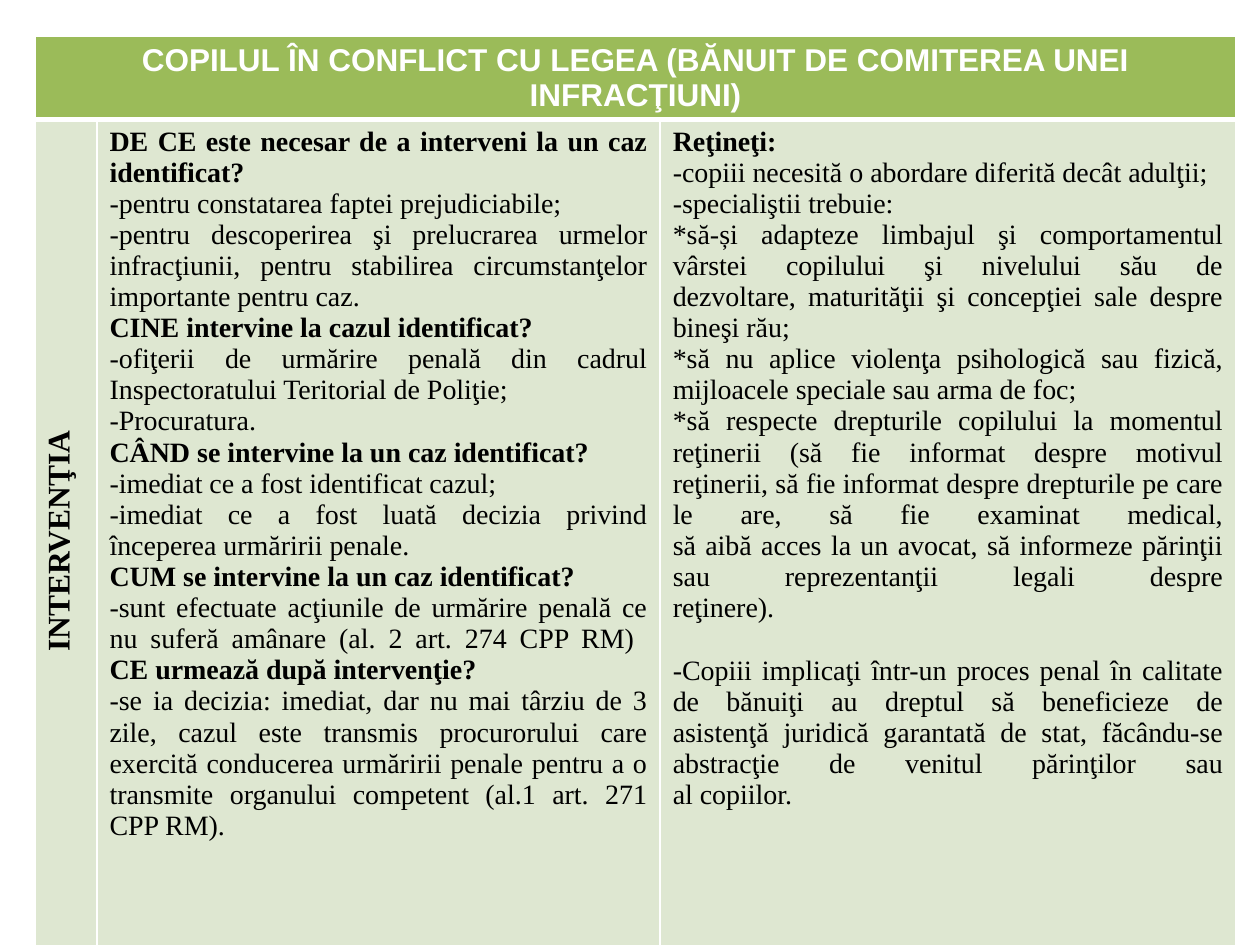
from copy import deepcopy
from dataclasses import dataclass

from lxml.etree import SubElement
from pptx import Presentation
from pptx.dml.color import RGBColor as RGB
from pptx.enum.text import PP_ALIGN as AL
from pptx.oxml.ns import qn
from pptx.util import Inches, Pt


@dataclass(frozen=True)
class Theme:
    header: str = "9BBB59"
    body: str = "DEE7D1"
    white: str = "FFFFFF"
    black: str = "000000"
    head_font: str = "Arial"
    body_font: str = "Times New Roman"
    head_size: int = 18
    body_size: int = 16
    line: float = 1
    heavy_line: float = 3


BOLD = "#"  # a line starting with this mark is bold

TITLE = "#COPILUL ÎN CONFLICT CU LEGEA (BĂNUIT DE COMITEREA UNEI INFRACŢIUNI)"
STAGE = "#INTERVENŢIA"

QUESTIONS = [
    ("#DE CE este necesar de a interveni la un caz identificat?", {}),
    ("-pentru constatarea faptei prejudiciabile;", {}),
    ("-pentru descoperirea şi prelucrarea urmelor infracţiunii, pentru stabilirea "
     "circumstanţelor importante pentru caz.", {}),
    ("#CINE intervine la cazul identificat?", {}),
    ("-ofiţerii de urmărire penală din cadrul Inspectoratului Teritorial de Poliţie;", {}),
    ("-Procuratura.\n#CÂND se intervine la un caz identificat?\n"
     "-imediat ce a fost identificat cazul;", {"align": AL.LEFT}),
    ("-imediat ce a fost luată decizia privind începerea urmăririi penale.", {}),
    ("#CUM se intervine la un caz identificat?", {}),
    ("-sunt efectuate acţiunile de urmărire penală ce nu suferă amânare "
     "(al. 2 art. 274 CPP RM) \n#CE urmează după intervenţie?", {}),
    ("-se ia decizia: imediat, dar nu mai târziu de 3 zile, cazul este transmis "
     "procurorului care exercită conducerea urmăririi penale pentru a o\n"
     "transmite organului competent (al.1 art. 271 CPP RM).", {}),
]

REMINDERS = [
    ("#Reţineţi:\n-copiii necesită o abordare diferită decât adulţii;", {}),
    ("-specialiştii trebuie:", {}),
    ("*să-și adapteze limbajul şi comportamentul vârstei copilului şi nivelului său de\n"
     "dezvoltare, maturităţii şi concepţiei sale despre bineşi rău;", {}),
    ("*să nu aplice violenţa psihologică sau fizică, mijloacele speciale sau arma de foc;", {}),
    ("*să respecte drepturile copilului la momentul reţinerii (să fie informat despre motivul\n"
     "reţinerii, să fie informat despre drepturile pe care le are, să fie examinat medical,\n"
     "să aibă acces la un avocat, să informeze părinţii sau reprezentanţii legali despre\n"
     "reţinere).", {}),
    ("-Copiii implicaţi într-un proces penal în calitate de bănuiţi au dreptul să beneficieze de\n"
     "asistenţă juridică garantată de stat, făcându-se abstracţie de venitul părinţilor sau\n"
     "al copiilor.", {"before": 18}),
]


def write(p, text, *, font, size, color, align=AL.JUSTIFY, before=0):
    """Fill a paragraph; each newline becomes a line break of the same size."""
    p.alignment = align
    p.space_before = Pt(before)
    lines = text.split("\n")
    for i, line in enumerate(lines):
        r = p.add_run()
        r.text = line.removeprefix(BOLD)
        r.font.name = font
        r.font.size = Pt(size)
        r.font.bold = line.startswith(BOLD)
        r.font.color.rgb = RGB.from_string(color)
        if i < len(lines) - 1:
            p.add_line_break()
            p._p[-1].append(deepcopy(r._r.rPr))


class SlideBuilder:
    def __init__(self, prs, theme):
        self.theme = theme
        self.s = prs.slides.add_slide(prs.slide_layouts[6])

    def table(self, left, top, cols, rows):
        frame = self.s.shapes.add_table(
            len(rows), len(cols), Inches(left), Inches(top),
            Inches(sum(cols)), Inches(sum(rows)))
        for col, width in zip(frame.table.columns, cols):
            col.width = Inches(width)
        for row, height in zip(frame.table.rows, rows):
            row.height = Inches(height)
        return frame.table

    def cell(self, cell, fill, **edges):
        """Set borders, then fill; edges override widths by side (L, R, T, B)."""
        tcPr = cell._tc.get_or_add_tcPr()
        for side in "LRTB":
            width = Pt(edges.get(side, self.theme.line))
            ln = SubElement(tcPr, qn(f"a:ln{side}"), w=str(width))
            SubElement(SubElement(ln, qn("a:solidFill")), qn("a:srgbClr"),
                       val=self.theme.white)
        cell.fill.solid()
        cell.fill.fore_color.rgb = RGB.from_string(fill)

    def paragraphs(self, cell, items, **style):
        tf = cell.text_frame
        for i, (text, own) in enumerate(items):
            p = tf.add_paragraph() if i else tf.paragraphs[0]
            write(p, text, **{**style, **own})


def main():
    prs = Presentation()
    prs.slide_width, prs.slide_height = Inches(10), Inches(7.5)
    theme = Theme()
    slide = SlideBuilder(prs, theme)

    table = slide.table(0.28, 0.29, cols=[0.49, 4.47, 4.57], rows=[0.4, 6.69])
    for col in range(3):
        slide.cell(table.cell(0, col), theme.header, B=theme.heavy_line)
        slide.cell(table.cell(1, col), theme.body, T=theme.heavy_line)
    title, stage = table.cell(0, 0), table.cell(1, 0)
    title.merge(table.cell(0, 2))
    stage._tc.tcPr.set("vert", "vert270")

    centred = {"size": theme.head_size, "align": AL.CENTER}
    slide.paragraphs(title, [(TITLE, {})], font=theme.head_font,
                     color=theme.white, **centred)
    body = {"font": theme.body_font, "color": theme.black}
    slide.paragraphs(stage, [(STAGE, {})], **body, **centred)
    for col, items in enumerate((QUESTIONS, REMINDERS), start=1):
        slide.paragraphs(table.cell(1, col), items, size=theme.body_size, **body)

    prs.save("out.pptx")


if __name__ == "__main__":
    main()
